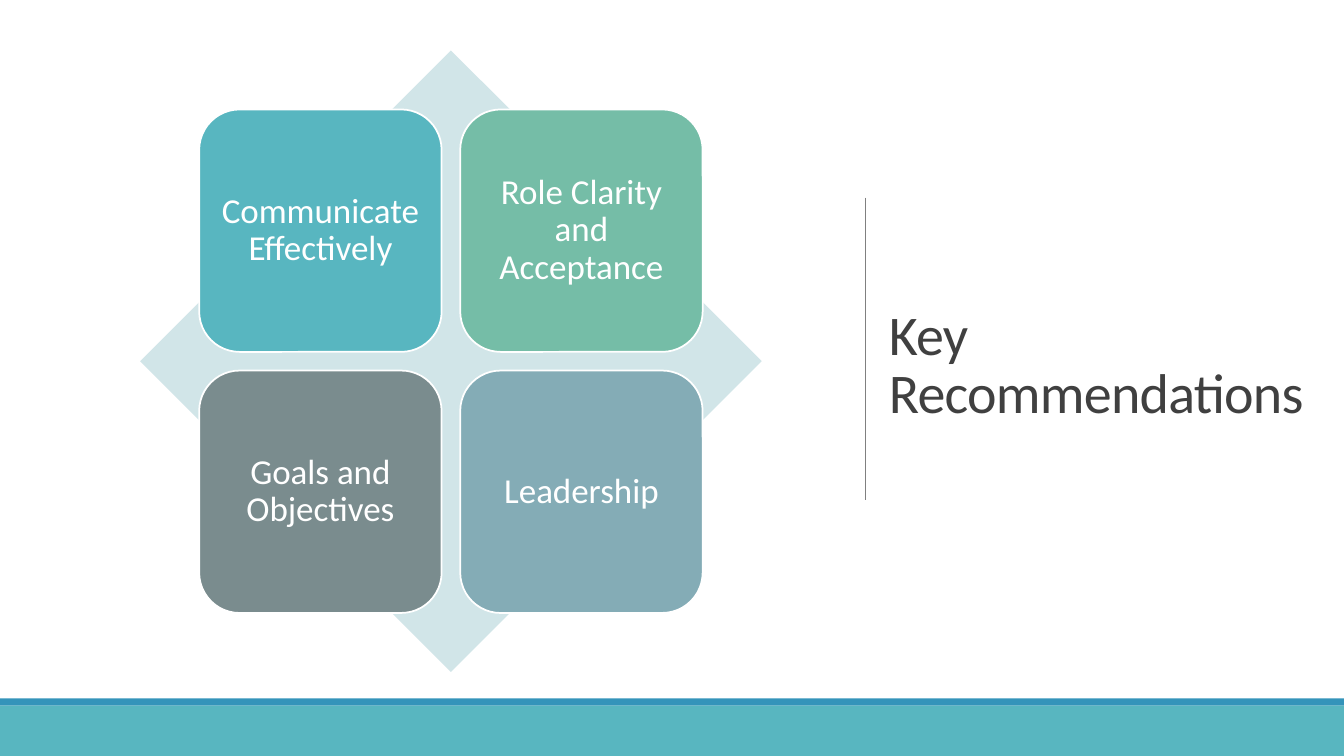
from dataclasses import dataclass

from lxml import etree
from pptx import Presentation
from pptx.dml.color import RGBColor
from pptx.enum.shapes import MSO_CONNECTOR, MSO_SHAPE
from pptx.enum.text import MSO_ANCHOR, PP_ALIGN
from pptx.oxml.ns import qn
from pptx.util import Emu, Inches, Pt

RECTANGLE, DIAMOND = MSO_SHAPE.RECTANGLE, MSO_SHAPE.DIAMOND
ROUNDED = MSO_SHAPE.ROUNDED_RECTANGLE
STRAIGHT = MSO_CONNECTOR.STRAIGHT
MIDDLE, LEFT, CENTER = MSO_ANCHOR.MIDDLE, PP_ALIGN.LEFT, PP_ALIGN.CENTER

# The slide is a grid of 80 columns and 45 rows of square cells
COLUMNS, ROWS = 80, 45
CELL = Inches(7.5) // ROWS


@dataclass(frozen=True)
class Theme:
    font: str = "Calibri"
    title_size: float = 40
    tile_size: float = 25
    tile_border: float = 1.25
    rule_width: float = 0.5
    white: str = "FFFFFF"
    title: str = "404040"
    rule: str = "808080"
    stripe: str = "3494BA"
    teal: str = "58B6C0"
    diamond: str = "D1E5E8"
    green: str = "75BDA7"
    slate: str = "7A8C8E"
    steel: str = "84ACB6"


@dataclass(frozen=True)
class Area:
    column: float
    row: float
    columns: float
    rows: float

    def emu(self) -> list[Emu]:
        return [cells(n) for n in (self.column, self.row, self.columns, self.rows)]


@dataclass(frozen=True)
class Block:
    kind: MSO_SHAPE
    area: Area
    fill: str


@dataclass(frozen=True)
class Tile:
    text: str
    fill: str
    across: int
    down: int


THEME = Theme()
PANEL_ROWS, FOOTER_ROW = 41.58, 42
MATRIX = Area(8.34, 3, 37, 37)
TITLE = Area(52.32, 5.28, 25.92, 33.18)
RULE = Area(51.54, 11.76, 0, 18)

# Tile side and pitch as shares of the matrix, centred in it
TILE_SHARE, PITCH_SHARE = 0.39, 0.42
MARGIN_SHARE = (1 - TILE_SHARE - PITCH_SHARE) / 2

PANEL = Block(RECTANGLE, Area(0, 0, COLUMNS, PANEL_ROWS), THEME.white)
STRIPE = Block(RECTANGLE, Area(0, PANEL_ROWS, COLUMNS, FOOTER_ROW - PANEL_ROWS), THEME.stripe)
FOOTER = Block(RECTANGLE, Area(0, FOOTER_ROW, COLUMNS, ROWS - FOOTER_ROW), THEME.teal)
BACKDROP = Block(DIAMOND, MATRIX, THEME.diamond)

TILES = (
    Tile("Communicate Effectively", THEME.teal, 0, 0),
    Tile("Role Clarity and Acceptance", THEME.green, 1, 0),
    Tile("Goals and Objectives", THEME.slate, 0, 1),
    Tile("Leadership", THEME.steel, 1, 1),
)


def cells(count: float) -> Emu:
    return Emu(round(count * CELL))


def color(value: str) -> RGBColor:
    return RGBColor.from_string(value)


def draw_block(slide, block: Block):
    shape = slide.shapes.add_shape(block.kind, *block.area.emu())
    shape.shadow.inherit = False
    shape.fill.solid()
    shape.fill.fore_color.rgb = color(block.fill)
    shape.line.fill.background()
    return shape


def write(shape, text: str, size: float, ink: str, align: PP_ALIGN, spacing: float):
    frame = shape.text_frame
    frame.text = text
    frame.word_wrap = True
    frame.vertical_anchor = MIDDLE
    para = frame.paragraphs[0]
    para.alignment = align
    para.line_spacing = spacing
    span = para.runs[0]
    span.font.name = THEME.font
    span.font.size = Pt(size)
    span.font.color.rgb = color(ink)
    return span


def draw_tile(slide, tile: Tile) -> None:
    side = MATRIX.columns * TILE_SHARE
    column = MATRIX.column + MATRIX.columns * (MARGIN_SHARE + tile.across * PITCH_SHARE)
    row = MATRIX.row + MATRIX.rows * (MARGIN_SHARE + tile.down * PITCH_SHARE)
    shape = draw_block(slide, Block(ROUNDED, Area(column, row, side, side), tile.fill))
    shape.line.color.rgb = color(THEME.white)
    shape.line.width = Pt(THEME.tile_border)
    write(shape, tile.text, THEME.tile_size, THEME.white, CENTER, 0.9)
    shape.text_frame.margin_left = shape.text_frame.margin_right = Inches(0.08)


def draw_title(slide, text: str) -> None:
    box = slide.shapes.add_textbox(*TITLE.emu())
    span = write(box, text, THEME.title_size, THEME.title, LEFT, 0.85)
    box.text_frame.margin_right = 0
    # Letter spacing in hundredths of a point
    span.font._element.set("spc", "-50")


def draw_rule(slide) -> None:
    left, top, width, height = RULE.emu()
    rule = slide.shapes.add_connector(STRAIGHT, left, top, left + width, top + height)
    rule.line.color.rgb = color(THEME.rule)
    rule.line.width = Pt(THEME.rule_width)
    etree.SubElement(rule._element.spPr, qn("a:effectLst"))


def main() -> None:
    deck = Presentation()
    deck.slide_width, deck.slide_height = cells(COLUMNS), cells(ROWS)
    page = deck.slides.add_slide(deck.slide_layouts[6])

    # Background panel, title and rule
    draw_block(page, PANEL)
    draw_title(page, "Key Recommendations")
    draw_rule(page)

    # Footer bands and the matrix backdrop
    for block in (STRIPE, FOOTER, BACKDROP):
        draw_block(page, block)

    # Matrix tiles
    for tile in TILES:
        draw_tile(page, tile)

    deck.save("out.pptx")


if __name__ == "__main__":
    main()
